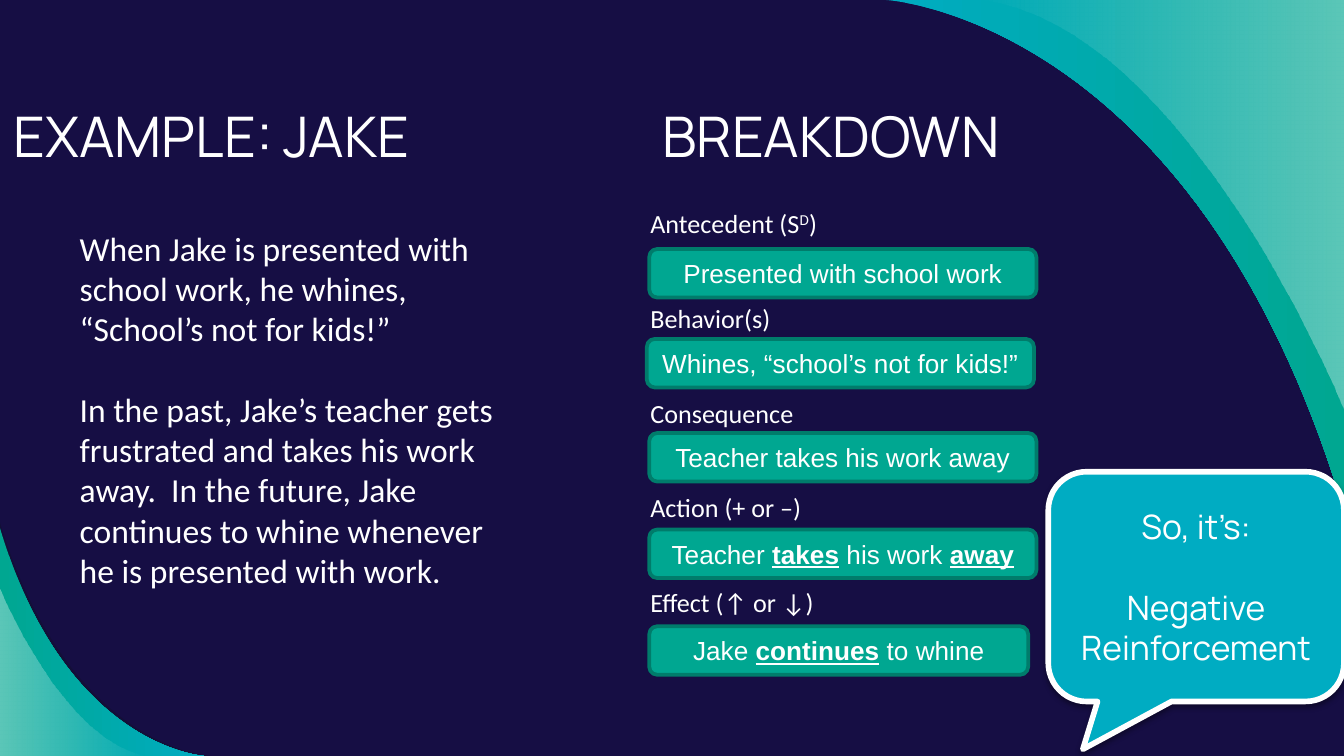
from lxml import etree
from pptx import Presentation
from pptx.dml.color import RGBColor
from pptx.enum.shapes import MSO_SHAPE
from pptx.enum.text import MSO_ANCHOR, PP_ALIGN
from pptx.oxml import parse_xml
from pptx.oxml.ns import nsdecls, qn
from pptx.util import Pt

ROUNDED, CALLOUT = MSO_SHAPE.ROUNDED_RECTANGLE, MSO_SHAPE.ROUNDED_RECTANGULAR_CALLOUT
TOP, MIDDLE = MSO_ANCHOR.TOP, MSO_ANCHOR.MIDDLE
LEFT, CENTER = PP_ALIGN.LEFT, PP_ALIGN.CENTER
COLORS = {"navy": "160E44", "shade": "12102F", "cyan": "00ACC2",
          "green": "00A791", "border": "007C6B", "white": "FFFFFF"}
RGB = {name: RGBColor.from_string(value) for name, value in COLORS.items()}


def write(shape, paragraphs, size, font, align=LEFT, anchor=TOP, gap=0,
          margins=(7.2, 7.2), indent=0):
    frame = shape.text_frame
    frame.word_wrap = True
    frame.vertical_anchor = anchor
    frame.margin_left = frame.margin_right = Pt(margins[0])
    frame.margin_top = frame.margin_bottom = Pt(margins[1])
    for index, runs in enumerate(paragraphs):
        paragraph = frame.paragraphs[0] if index == 0 else frame.add_paragraph()
        paragraph.alignment = align
        paragraph.space_before = Pt(gap if index else 0)
        if indent:
            paragraph._p.get_or_add_pPr().set("marL", str(Pt(indent)))
        for text, style in runs:
            run = paragraph.add_run()
            run.text = text
            run.font.size = Pt(size)
            run.font.name = font
            run.font.color.rgb = RGB["white"]
            if style == "strong":
                run.font.bold = run.font.underline = True
            elif style == "super":
                run.font._element.set("baseline", "30000")


def set_alpha(color_parent, percent):
    color = color_parent.find(".//" + qn("a:srgbClr"))
    etree.SubElement(color, qn("a:alpha")).set("val", str(percent * 1000))


presentation = Presentation()
presentation.slide_width, presentation.slide_height = Pt(720), Pt(405)
slide = presentation.slides.add_slide(presentation.slide_layouts[5])
slide.background.fill.solid()
slide.background.fill.fore_color.rgb = RGB["navy"]

lower, upper = (0, 405), (720, 0)
waves = [
    ([(0, 280), (36.7, 401), (112.3, 405), (112.3, 405)], lower, [("shade", 54), ("shade", 54)]),
    ([(0, 283), (35.3, 401), (109.4, 405), (109.4, 405)], lower, [("green", 100), ("cyan", 100)]),
    ([(0, 314.6), (0, 314.6), (33.8, 399.6), (80, 405)], lower, [("white", 36), ("white", 0)]),
    ([(474.5, 0), (474.5, 0), (640.8, 8.6), (720, 273.6)], upper, [("cyan", 100), ("green", 100)]),
    ([(720, 220.3), (720, 220.3), (637.2, 13.7), (524.9, 0)], upper, [("white", 0), ("white", 36)]),
]
for controls, corner, stops in waves:
    points = [(Pt(x), Pt(y)) for x, y in controls + [corner]]
    builder = slide.shapes.build_freeform(*points[0])
    builder.add_line_segments(points[1:], close=True)
    wave = builder.convert_to_shape()
    lines = list(wave._element.iter(qn("a:lnTo")))[:3]
    curve = etree.Element(qn("a:cubicBezTo"))
    lines[0].addprevious(curve)
    for line in lines:
        curve.append(line[0])
        line.getparent().remove(line)
    wave.shadow.inherit = False
    wave.line.fill.background()
    wave.fill.gradient()
    wave.fill.gradient_angle = 0
    for stop, position, (color, alpha) in zip(wave.fill.gradient_stops, (0, 1), stops):
        stop.position = position
        stop.color.rgb = RGB[color]
        if alpha < 100:
            set_alpha(stop._gs, alpha)

labels = slide.shapes.add_textbox(Pt(330.5), Pt(186.6), Pt(151), Pt(69))
write(labels, [
    [("Antecedent (S", ""), ("D", "super"), (")", "")],
    [("Behavior(s)", "")],
    [("Consequence", "")],
    [("Action (+ or –)", "")],
    [("Effect (↑ or ↓)", "")],
], 14, "Calibri", anchor=MIDDLE, gap=33.9, indent=10.8)

heading = slide.shapes.add_textbox(Pt(347.8), Pt(47.2), Pt(203), Pt(49.7))
write(heading, [[("BREAKDOWN", "")]], 30, "Manrope")
title = slide.shapes.title
title.left, title.top, title.width, title.height = Pt(0), Pt(47.2), Pt(236), Pt(36)
write(title, [[("EXAMPLE: JAKE", "")]], 30, "Manrope")

story = slide.shapes.add_textbox(Pt(24.8), Pt(113), Pt(253.4), Pt(228.2))
write(story, [
    [("When Jake is presented with school work, he whines, “School’s not for kids!”", "")],
    [("In the past, Jake’s teacher gets frustrated and takes his work away.  In the future, "
      "Jake continues to whine whenever he is presented with work.", "")],
], 18, "Calibri", gap=21.5, margins=(7.2, 8.9), indent=10.8)

answers = [
    (347.8, 133.4, 207.4, [("Presented with school work", "")]),
    (346.5, 181.6, 207.4, [("Whines, “school’s not for kids!”", "")]),
    (347.8, 232, 207.4, [("Teacher takes his work away", "")]),
    (347.8, 283.7, 207.4, [("Teacher ", ""), ("takes", "strong"),
                           (" his work ", ""), ("away", "strong")]),
    (347.8, 335.5, 203, [("Jake ", ""), ("continues", "strong"), (" to whine", "")]),
]
for left, top, width, runs in answers:
    answer = slide.shapes.add_shape(ROUNDED, Pt(left), Pt(top), Pt(width), Pt(26))
    answer.shadow.inherit = False
    answer.fill.solid()
    answer.fill.fore_color.rgb = RGB["green"]
    answer.line.color.rgb = RGB["border"]
    answer.line.width = Pt(2)
    write(answer, [runs], 14, "Arial", CENTER, MIDDLE, margins=(3, 3))

callout = slide.shapes.add_shape(CALLOUT, Pt(561.6), Pt(252.7), Pt(158.4), Pt(123.1))
for index, value in enumerate((-0.383, 0.708, 0.167)):
    callout.adjustments[index] = value
callout.fill.solid()
callout.fill.fore_color.rgb = RGB["cyan"]
callout.line.color.rgb = RGB["white"]
callout.line.width = Pt(3)
effects = parse_xml(
    f'<a:effectLst {nsdecls("a")}><a:outerShdw blurRad="{Pt(3.1)}" dist="{Pt(1.6)}" '
    'dir="5400000" rotWithShape="0"><a:srgbClr val="000000"/></a:outerShdw></a:effectLst>')
set_alpha(effects, 38)
callout._element.spPr.append(effects)
write(callout, [[("So, it’s:", "")], [("Negative", "")], [("Reinforcement", "")]],
      18, "Manrope", CENTER, MIDDLE, margins=(7.2, 3.6))
callout.text_frame.paragraphs[1].space_before = Pt(21.5)

presentation.save("out.pptx")
